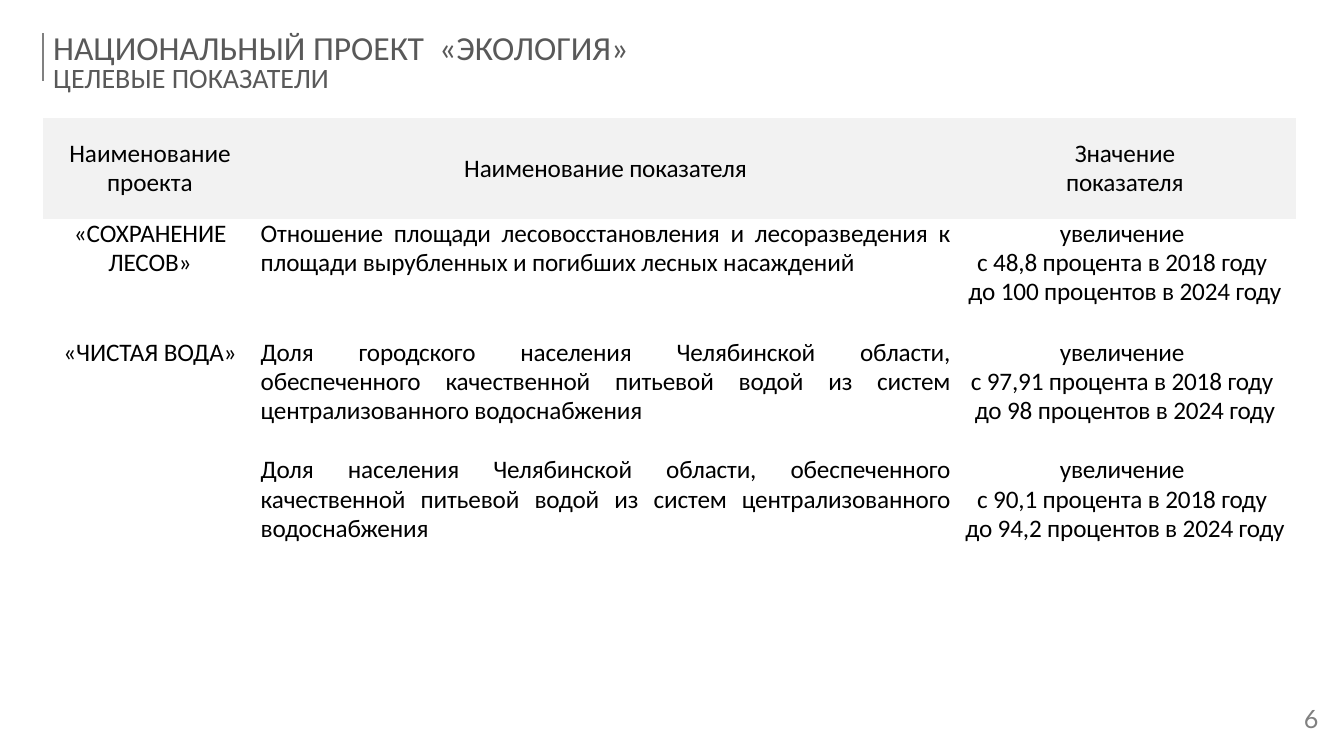
import pptx
import pptx.util
import pptx.dml.color
import pptx.enum.shapes
import pptx.enum.text
import pptx.oxml.ns
import lxml.etree

Cm = pptx.util.Cm
Pt = pptx.util.Pt
ALIGN = pptx.enum.text.PP_ALIGN
ANCHOR = pptx.enum.text.MSO_ANCHOR

COLORS = {"rule": "808080", "title": "595959", "text": "000000", "header": "F2F2F2"}
TITLE = "НАЦИОНАЛЬНЫЙ ПРОЕКТ  «ЭКОЛОГИЯ»"
SUBTITLE = "ЦЕЛЕВЫЕ ПОКАЗАТЕЛИ"
PAGE_NUMBER = "6"
HEADER = (["Наименование проекта"], ["Наименование показателя"], ["Значение", "показателя"])
INDICATORS = [
    (
        ["«СОХРАНЕНИЕ ЛЕСОВ»"],
        ["Отношение площади лесовосстановления и лесоразведения к площади вырубленных и погибших лесных насаждений"],
        ["увеличение ", "с 48,8 процента в 2018 году ", "до 100 процентов в 2024 году"],
    ),
    (
        ["«ЧИСТАЯ ВОДА»"],
        ["Доля городского населения Челябинской области, обеспеченного качественной питьевой водой из систем централизованного водоснабжения"],
        ["увеличение ", "с 97,91 процента в 2018 году ", "до 98 процентов в 2024 году"],
    ),
    (
        [],
        ["Доля населения Челябинской области, обеспеченного качественной питьевой водой из систем централизованного водоснабжения"],
        ["увеличение ", "с 90,1 процента в 2018 году ", "до 94,2 процентов в 2024 году"],
    ),
]
COLUMN_WIDTHS = (5.38, 17.58, 8.6)
ROW_HEIGHTS = (2.54, 3, 2.97, 2.9)
COLUMN_ALIGNMENTS = (ALIGN.CENTER, ALIGN.JUSTIFY, ALIGN.CENTER)
LEFT = 1.09
NO_STYLE_NO_GRID = "{2D5ABB26-0587-4C30-8999-92F81FD0307C}"


def write(frame, lines, sizes=(18,), font="Calibri", color="text",
          align=ALIGN.LEFT, spacing=0.95, tracking=None):
    for index, line in enumerate(lines):
        paragraph = frame.add_paragraph() if index else frame.paragraphs[0]
        paragraph.alignment = align
        paragraph.line_spacing = spacing
        run = paragraph.add_run()
        run.text = line
        run.font.name = font
        run.font.size = Pt(sizes[min(index, len(sizes) - 1)])
        run.font.bold = False
        run.font.color.rgb = pptx.dml.color.RGBColor.from_string(COLORS[color])
        if tracking:
            run._r.get_or_add_rPr().set("spc", str(tracking))


def add_text(slide, lines, left, top, width, height, anchor, **style):
    frame = slide.shapes.add_textbox(Cm(left), Cm(top), Cm(width), Cm(height)).text_frame
    frame.word_wrap = True
    frame.vertical_anchor = anchor
    write(frame, lines, spacing=0.8, **style)


def add_rule(slide):
    rule = slide.shapes.add_connector(
        pptx.enum.shapes.MSO_CONNECTOR.STRAIGHT, Cm(LEFT), Cm(0.84), Cm(LEFT), Cm(2.03))
    rule.line.color.rgb = pptx.dml.color.RGBColor.from_string(COLORS["rule"])
    rule.line.width = Pt(1.5)
    lxml.etree.SubElement(rule._element.spPr, pptx.oxml.ns.qn("a:effectLst"))


def add_indicator_table(slide):
    rows = [HEADER] + INDICATORS
    frame = slide.shapes.add_table(
        len(rows), len(COLUMN_WIDTHS), Cm(LEFT), Cm(2.97),
        Cm(sum(COLUMN_WIDTHS)), Cm(sum(ROW_HEIGHTS)))
    table = frame.table
    table.first_row = False
    table.horz_banding = False
    table._tbl.tblPr.find(pptx.oxml.ns.qn("a:tableStyleId")).text = NO_STYLE_NO_GRID
    for column, width in zip(table.columns, COLUMN_WIDTHS):
        column.width = Cm(width)
    for row, height in zip(table.rows, ROW_HEIGHTS):
        row.height = Cm(height)
    table.cell(2, 0).merge(table.cell(3, 0))
    for row_index, row in enumerate(rows):
        for column_index, lines in enumerate(row):
            cell = table.cell(row_index, column_index)
            cell.margin_left = cell.margin_right = Cm(0.1)
            cell.margin_top = cell.margin_bottom = 0
            is_header = row_index == 0
            if is_header:
                cell.fill.solid()
                cell.fill.fore_color.rgb = pptx.dml.color.RGBColor.from_string(COLORS["header"])
            else:
                cell.fill.background()
            cell.vertical_anchor = ANCHOR.MIDDLE if is_header else ANCHOR.TOP
            align = ALIGN.CENTER if is_header else COLUMN_ALIGNMENTS[column_index]
            tracking = None if is_header and column_index == 0 else -10
            write(cell.text_frame, lines, align=align, tracking=tracking)


def main():
    presentation = pptx.Presentation()
    presentation.slide_width = Cm(33.87)
    presentation.slide_height = Cm(19.05)
    slide = presentation.slides.add_slide(presentation.slide_layouts[6])
    add_rule(slide)
    add_text(slide, [PAGE_NUMBER], 31.57, 17.53, 2.95, 1.27, ANCHOR.MIDDLE,
             font="Lato", color="rule", align=ALIGN.CENTER)
    add_text(slide, [TITLE, SUBTITLE], LEFT, 0.76, 31.47, 1.8, ANCHOR.TOP,
             sizes=(24, 20), color="title")
    add_indicator_table(slide)
    presentation.save("out.pptx")


if __name__ == "__main__":
    main()
